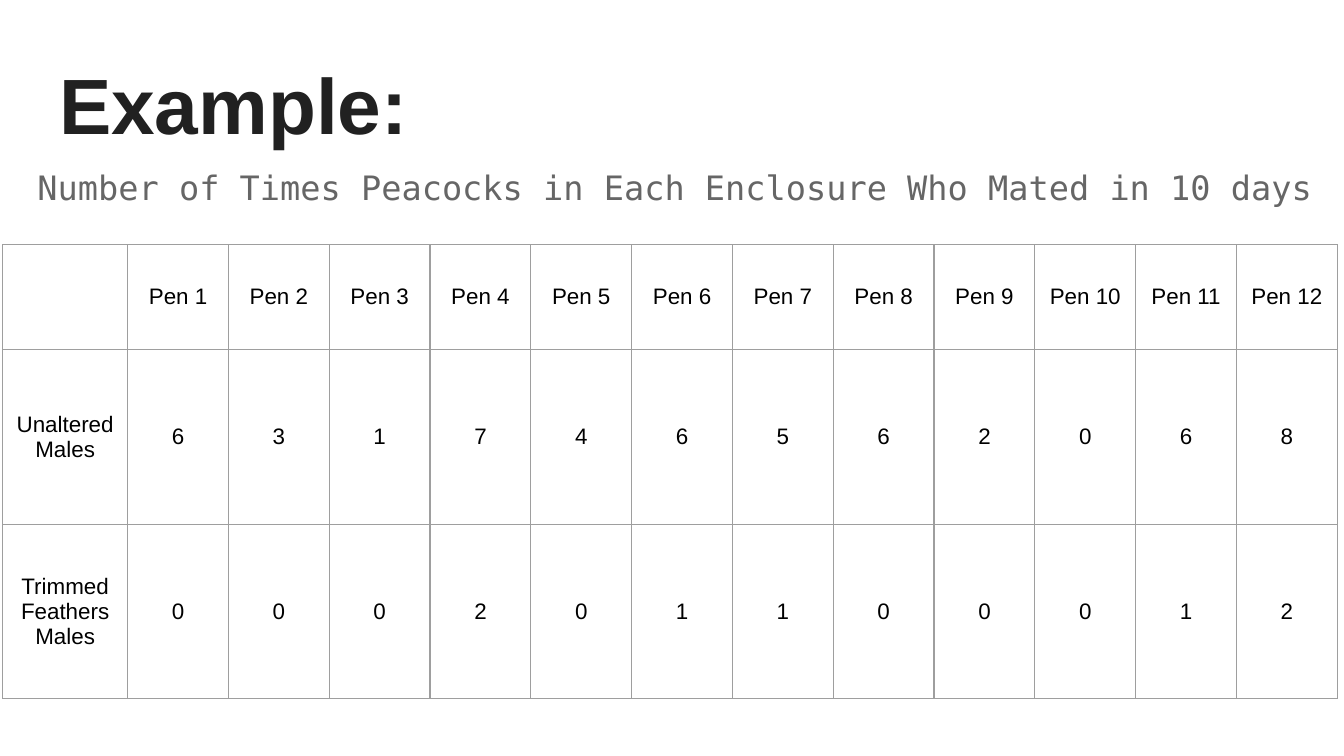
import dataclasses

import lxml.etree
import pptx
import pptx.dml.color
import pptx.enum.text
import pptx.oxml.ns
import pptx.util

Inches = pptx.util.Inches
Pt = pptx.util.Pt
ALIGN = pptx.enum.text.PP_ALIGN
ANCHOR = pptx.enum.text.MSO_ANCHOR
qn = pptx.oxml.ns.qn


@dataclasses.dataclass(frozen=True)
class Theme:
    heading_font: str = "Arial"
    caption_font: str = "DejaVu Sans Mono"
    heading_color: str = "212121"
    caption_color: str = "666666"
    table_color: str = "000000"
    grid_color: str = "9E9E9E"
    heading_size: float = 42
    caption_size: float = 18
    table_size: float = 12
    grid_width: float = 0.75
    inset: float = 0.1


THEME = Theme()

MATINGS = {
    "Unaltered Males": [6, 3, 1, 7, 4, 6, 5, 6, 2, 0, 6, 8],
    "Trimmed Feathers Males": [0, 0, 0, 2, 0, 1, 1, 0, 0, 0, 1, 2],
}
PEN_COUNT = 12
COLUMN_WIDTHS = [0.93] + [0.75] * PEN_COUNT
ROW_HEIGHTS = [0.78, 1.3, 1.3]


def write(frame, text, *, font, size, color, bold=False, align=ALIGN.LEFT,
          line_spacing=1.0, space_after=0):
    frame.text = text
    paragraph = frame.paragraphs[0]
    paragraph.alignment = align
    paragraph.line_spacing = line_spacing
    paragraph.space_before = Pt(0)
    paragraph.space_after = Pt(space_after)
    style = paragraph.runs[0].font
    style.name = font
    style.size = Pt(size)
    style.bold = bold
    style.color.rgb = pptx.dml.color.RGBColor.from_string(color)
    return paragraph


def set_insets(target):
    for side in ("left", "right", "top", "bottom"):
        setattr(target, f"margin_{side}", Inches(THEME.inset))


def fill_placeholder(placeholder, text, left, top, width, height, **text_format):
    placeholder.left, placeholder.top = Inches(left), Inches(top)
    placeholder.width, placeholder.height = Inches(width), Inches(height)
    frame = placeholder.text_frame
    set_insets(frame)
    frame.word_wrap = True
    frame.auto_size = pptx.enum.text.MSO_AUTO_SIZE.NONE
    frame.vertical_anchor = ANCHOR.TOP
    return write(frame, text, **text_format)


def remove_bullet(paragraph):
    properties = paragraph._p.get_or_add_pPr()
    properties.set("marL", "0")
    properties.set("indent", "0")
    lxml.etree.SubElement(properties, qn("a:buNone"))


def draw_borders(cell):
    properties = cell._tc.get_or_add_tcPr()
    for edge in ("a:lnL", "a:lnR", "a:lnT", "a:lnB"):
        line = lxml.etree.SubElement(properties, qn(edge), w=str(Pt(THEME.grid_width)))
        fill = lxml.etree.SubElement(line, qn("a:solidFill"))
        lxml.etree.SubElement(fill, qn("a:srgbClr"), val=THEME.grid_color)


def fill_cell(cell, text):
    set_insets(cell)
    cell.vertical_anchor = ANCHOR.MIDDLE
    draw_borders(cell)
    cell.fill.background()
    if text:
        write(cell.text_frame, text, font=THEME.heading_font, size=THEME.table_size,
              color=THEME.table_color, align=ALIGN.CENTER)


def add_matings_table(slide, left, top):
    header = [""] + [f"Pen {number}" for number in range(1, PEN_COUNT + 1)]
    rows = [header] + [[group, *map(str, counts)] for group, counts in MATINGS.items()]
    table = slide.shapes.add_table(
        len(rows), len(header), Inches(left), Inches(top),
        Inches(sum(COLUMN_WIDTHS)), Inches(sum(ROW_HEIGHTS))).table
    table.first_row = False
    table.horz_banding = False
    for column, width in zip(table.columns, COLUMN_WIDTHS):
        column.width = Inches(width)
    for row, height, texts in zip(table.rows, ROW_HEIGHTS, rows):
        row.height = Inches(height)
        for cell, text in zip(row.cells, texts):
            fill_cell(cell, text)


def main():
    presentation = pptx.Presentation()
    presentation.slide_width = Inches(10)
    presentation.slide_height = Inches(10 * 9 / 16)
    slide = presentation.slides.add_slide(presentation.slide_layouts[1])

    fill_placeholder(slide.shapes.title, "Example:", 0.34, 0.32, 9.32, 0.88,
                     font=THEME.heading_font, size=THEME.heading_size,
                     color=THEME.heading_color, bold=True)
    caption = fill_placeholder(
        slide.placeholders[1],
        "Number of Times Peacocks in Each Enclosure Who Mated in 10 days",
        0.02, 1.1, 10, 3.9, font=THEME.caption_font, size=THEME.caption_size,
        color=THEME.caption_color, align=ALIGN.CENTER, line_spacing=1.15, space_after=16)
    remove_bullet(caption)
    add_matings_table(slide, 0.02, 1.82)

    presentation.save("out.pptx")


if __name__ == "__main__":
    main()
